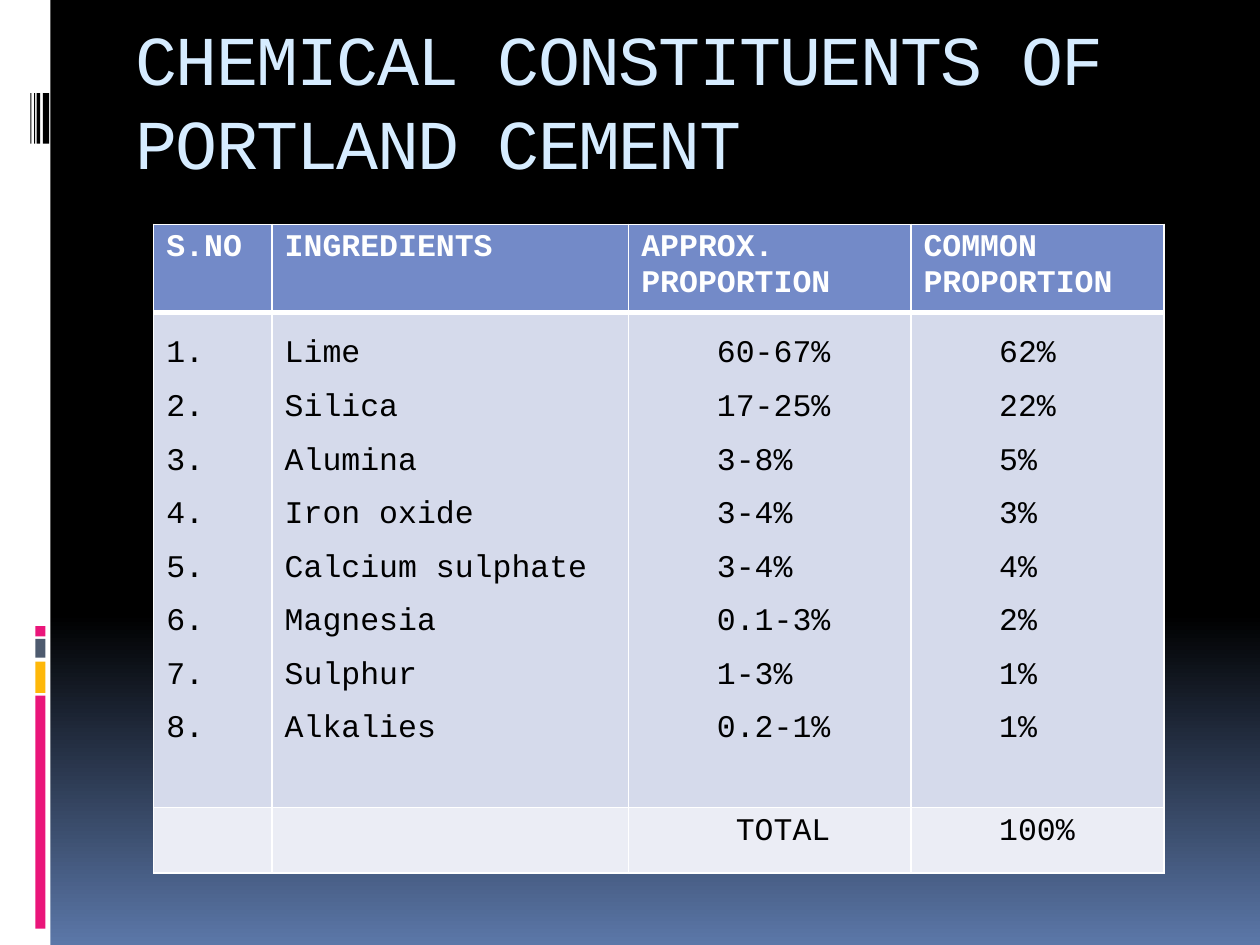
from lxml import etree
from pptx import Presentation
from pptx import util as u
from pptx.dml.color import RGBColor
from pptx.enum import shapes, text
from pptx.oxml import ns

FONT = "Courier New"
WHITE = RGBColor(0xFF, 0xFF, 0xFF)
BLACK = RGBColor(0, 0, 0)
PINK = RGBColor(0xEA, 0x15, 0x7A)
GOLD = RGBColor(0xFE, 0xB8, 0x0A)
SLATE = RGBColor(0x4E, 0x5B, 0x6F)
STEEL = RGBColor(0x5B, 0x77, 0xA8)
PALE = RGBColor(0xD6, 0xEC, 0xFF)
HEAD = RGBColor(0x73, 0x8A, 0xC8)
BODY = RGBColor(0xD5, 0xDA, 0xEB)
FOOT = RGBColor(0xEB, 0xED, 0xF5)

BARS = [(5.52, 1.85, PINK), (5.25, 0.25, GOLD), (5.07, 0.15, SLATE), (4.97, 0.08, PINK)]
STRIPES = [(0.34, 0.05), (0.29, 0.03), (0.27, 0.01), (0.24, 0.01)]
TITLE = "CHEMICAL CONSTITUENTS OF PORTLAND CEMENT"
HEADS = ["S.NO", "INGREDIENTS", "APPROX. PROPORTION", "COMMON PROPORTION"]
MIX = [
    ("Lime", "60-67%", "62%"),
    ("Silica", "17-25%", "22%"),
    ("Alumina", "3-8%", "5%"),
    ("Iron oxide", "3-4%", "3%"),
    ("Calcium sulphate", "3-4%", "4%"),
    ("Magnesia", "0.1-3%", "2%"),
    ("Sulphur", "1-3%", "1%"),
    ("Alkalies", "0.2-1%", "1%"),
]
WIDTHS = [0.94, 2.83, 2.24, 2.01]
HEIGHTS = [0.66, 3.93, 0.52]
PAD = 0.1
CHAR = 0.15


def add_back(slide):
    fill = slide.background.fill
    fill.gradient()
    fill.gradient_angle = 270
    for stop, (pos, color) in zip(fill.gradient_stops, [(0.65, BLACK), (1, STEEL)]):
        stop.position = pos
        stop.color.rgb = color


def add_bar(slide, left, top, width, height, color):
    bar = slide.shapes.add_shape(
        shapes.MSO_SHAPE.RECTANGLE,
        u.Inches(left), u.Inches(top), u.Inches(width), u.Inches(height))
    bar.shadow.inherit = False
    bar.fill.solid()
    bar.fill.fore_color.rgb = color
    bar.line.fill.background()


def set_font(para, size, color, bold=False):
    font = para.font
    font.name = FONT
    font.size = u.Pt(size)
    font.bold = bold
    font.color.rgb = color


def add_title(slide):
    box = slide.shapes.add_textbox(u.Inches(0.98), 0, u.Inches(8.5), u.Inches(1.4))
    frame = box.text_frame
    frame.word_wrap = True
    frame.margin_top = u.Inches(0.12)
    frame.vertical_anchor = text.MSO_ANCHOR.TOP
    para = frame.paragraphs[0]
    run = para.add_run()
    run.text = TITLE
    run._r.get_or_add_rPr().set("spc", "-100")
    para.line_spacing = u.Pt(48)
    set_font(para, 40, PALE)


def set_edges(cell, base):
    props = cell._tc.get_or_add_tcPr()
    for spot, (side, width) in enumerate([("L", 1), ("R", 1), ("T", 1), ("B", base)]):
        edge = etree.Element(ns.qn(f"a:ln{side}"), w=str(u.Pt(width)))
        fill = etree.SubElement(edge, ns.qn("a:solidFill"))
        etree.SubElement(fill, ns.qn("a:srgbClr"), val=str(WHITE))
        props.insert(spot, edge)


def fill_cell(cell, lines, fill, color, bold=False, space=1, indent=0, base=1):
    cell.fill.solid()
    cell.fill.fore_color.rgb = fill
    cell.margin_left = u.Inches(PAD + indent * CHAR)
    cell.text = "\n".join(lines)
    for para in cell.text_frame.paragraphs:
        para.line_spacing = space
        set_font(para, 18, color, bold)
    set_edges(cell, base)


def add_grid(slide):
    grid = slide.shapes.add_table(
        len(HEIGHTS), len(WIDTHS), u.Inches(1.22), u.Inches(1.78),
        u.Inches(sum(WIDTHS)), u.Inches(sum(HEIGHTS))).table
    for row, height in zip(grid.rows, HEIGHTS):
        row.height = u.Inches(height)
    for col, width in zip(grid.columns, WIDTHS):
        col.width = u.Inches(width)
    names, rough, common = zip(*MIX)
    marks = [f"{n}." for n in range(1, len(MIX) + 1)]
    for c, lines in enumerate([marks, names, rough, common]):
        fill_cell(grid.cell(0, c), [HEADS[c]], HEAD, WHITE, bold=True, base=3)
        fill_cell(grid.cell(1, c), lines, BODY, BLACK, space=1.5,
                  indent=4 if c > 1 else 0)
    for c, (word, indent) in enumerate([("", 0), ("", 0), ("TOTAL", 5), ("100%", 4)]):
        fill_cell(grid.cell(2, c), [word], FOOT, BLACK, indent=indent)


def main():
    deck = Presentation()
    deck.slide_width, deck.slide_height = u.Inches(10), u.Inches(7.5)
    slide = deck.slides.add_slide(deck.slide_layouts[6])
    add_back(slide)
    add_bar(slide, 0, 0, 0.4, 7.5, WHITE)
    for top, height, color in BARS:
        add_bar(slide, 0.28, top, 0.08, height, color)
    for left, width in STRIPES:
        add_bar(slide, left, 0.74, width, 0.4, BLACK)
    add_title(slide)
    add_grid(slide)
    deck.save("out.pptx")


if __name__ == "__main__":
    main()
